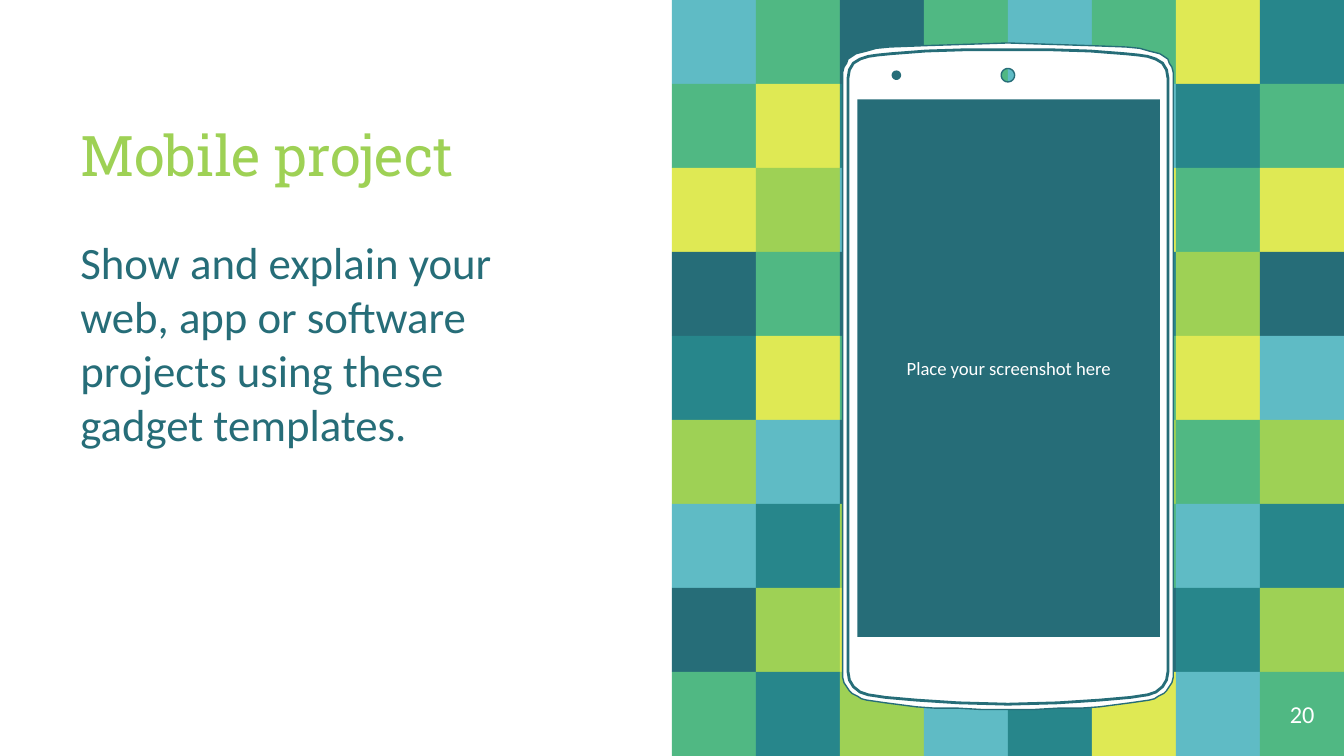
from math import cos, pi, sin

from pptx import Presentation
from pptx.dml.color import RGBColor
from pptx.enum.shapes import MSO_SHAPE
from pptx.enum.text import MSO_ANCHOR, PP_ALIGN
from pptx.util import Inches, Pt

RECTANGLE = MSO_SHAPE.RECTANGLE
TOP, MIDDLE, BOTTOM = MSO_ANCHOR.TOP, MSO_ANCHOR.MIDDLE, MSO_ANCHOR.BOTTOM
LEFT, CENTER = PP_ALIGN.LEFT, PP_ALIGN.CENTER

WHITE = RGBColor(0xFF, 0xFF, 0xFF)
LIME = RGBColor(0x9E, 0xD1, 0x55)
DARK = RGBColor(0x26, 0x6D, 0x78)
YELLOW = RGBColor(0xDF, 0xE9, 0x54)
GREEN = RGBColor(0x50, 0xB8, 0x83)
TEAL = RGBColor(0x27, 0x86, 0x8B)
BLUE = RGBColor(0x5F, 0xBB, 0xC5)

TITLE = "Mobile project"
BODY = "Show and explain your web, app or software projects using these gadget templates."
SCREEN_TEXT = "Place your screenshot here"
PAGE_NUMBER = "20"

TILE_COLORS = {"L": LIME, "D": DARK, "Y": YELLOW, "G": GREEN, "T": TEAL, "B": BLUE}
TILE_ROWS = [
    "BGDGBGYT",
    "GYTDYBTG",
    "YLB  YGY",
    "DGD  TLD",
    "TYG  GYB",
    "LBD  LGL",
    "BTL  GBT",
    "DLYDGDTL",
    "GTLBTYBG",
]
SLIDE_WIDTH = 10
TILES_LEFT = SLIDE_WIDTH / 2
TILE_SIZE = TILES_LEFT / len(TILE_ROWS[0])
SLIDE_HEIGHT = TILE_SIZE * len(TILE_ROWS)

PHONE_CENTER = 7.5
CASE_LEFT_HALF = [
    (7.5, 0.32), (7.2, 0.33), (6.89, 0.34), (6.62, 0.35), (6.52, 0.36),
    (6.45, 0.38), (6.41, 0.39), (6.37, 0.4), (6.34, 0.42), (6.31, 0.44),
    (6.3, 0.47), (6.28, 0.5), (6.27, 0.54), (6.27, 0.58),
    (6.27, 5), (6.27, 5.04), (6.28, 5.08), (6.3, 5.11), (6.32, 5.14),
    (6.34, 5.16), (6.38, 5.18), (6.41, 5.2), (6.45, 5.21), (6.59, 5.23),
    (6.82, 5.26), (6.96, 5.27), (7.13, 5.27), (7.31, 5.28), (7.5, 5.28),
]
RIM_LEFT_HALF = [
    (7.5, 0.37), (7.2, 0.37), (6.89, 0.38), (6.63, 0.4), (6.53, 0.41),
    (6.46, 0.42), (6.4, 0.44), (6.35, 0.47), (6.32, 0.52), (6.31, 0.58),
    (6.31, 5), (6.32, 5.06), (6.35, 5.11), (6.4, 5.15), (6.46, 5.17),
    (6.59, 5.19), (6.82, 5.21), (7.13, 5.23), (7.5, 5.24),
]
CAMERA = (7.5, 0.56, 0.05)
SENSOR = (6.67, 0.56, 0.03)


def mirrored(left_half):
    right_half = [(2 * PHONE_CENTER - x, y) for x, y in reversed(left_half[1:-1])]
    return left_half + right_half


def circle(center_x, center_y, radius, steps=24):
    angles = [2 * pi * step / steps for step in range(steps)]
    return [(center_x + radius * cos(a), center_y + radius * sin(a)) for a in angles]


def style_shape(shape, fill=None, line=None, width=0.75):
    shape.shadow.inherit = False
    if fill is None:
        shape.fill.background()
    else:
        shape.fill.solid()
        shape.fill.fore_color.rgb = fill
    if line is None:
        shape.line.fill.background()
    else:
        shape.line.color.rgb = line
        shape.line.width = Pt(width)


def add_rectangle(slide, box, fill):
    shape = slide.shapes.add_shape(RECTANGLE, *map(Inches, box))
    style_shape(shape, fill)
    return shape


def add_outline(slide, contours, **style):
    contours = [[(Inches(x), Inches(y)) for x, y in contour] for contour in contours]
    builder = slide.shapes.build_freeform(*contours[0][0])
    for index, contour in enumerate(contours):
        if index:
            builder.move_to(*contour[0])
        builder.add_line_segments(contour[1:], close=True)
    style_shape(builder.convert_to_shape(), **style)


def write_text(shape, text, size, color, font="Calibri", align=LEFT, anchor=TOP, before=0):
    frame = shape.text_frame
    frame.word_wrap = True
    frame.vertical_anchor = anchor
    frame.margin_left = frame.margin_right = Inches(0.1)
    frame.margin_top = frame.margin_bottom = Inches(0.1)
    paragraph = frame.paragraphs[0]
    paragraph.alignment = align
    paragraph.space_before = Pt(before)
    run = paragraph.add_run()
    run.text = text
    run.font.size = Pt(size)
    run.font.name = font
    run.font.color.rgb = color


def add_text(slide, box, text, **style):
    write_text(slide.shapes.add_textbox(*map(Inches, box)), text, **style)


def main():
    presentation = Presentation()
    presentation.slide_width = Inches(SLIDE_WIDTH)
    presentation.slide_height = Inches(SLIDE_HEIGHT)
    slide = presentation.slides.add_slide(presentation.slide_layouts[6])

    for row, codes in enumerate(TILE_ROWS):
        for column, code in enumerate(codes):
            if code in TILE_COLORS:
                left = TILES_LEFT + column * TILE_SIZE
                box = (left, row * TILE_SIZE, TILE_SIZE, TILE_SIZE)
                add_rectangle(slide, box, TILE_COLORS[code])

    case = [mirrored(CASE_LEFT_HALF), circle(*CAMERA), circle(*SENSOR)]
    add_outline(slide, case, fill=WHITE, line=DARK)
    add_outline(slide, [mirrored(RIM_LEFT_HALF)], line=DARK, width=1.5)

    add_text(slide, (0.5, 1.65, 3.87, 3.57), BODY, size=24, color=DARK, before=6)
    screen = add_rectangle(slide, (6.38, 0.74, 2.25, 4), DARK)
    write_text(screen, SCREEN_TEXT, size=10, color=WHITE, align=CENTER, anchor=MIDDLE)
    page_box = (SLIDE_WIDTH - TILE_SIZE, SLIDE_HEIGHT - TILE_SIZE, TILE_SIZE, TILE_SIZE)
    add_text(slide, page_box, PAGE_NUMBER, size=13, color=WHITE,
             align=CENTER, anchor=MIDDLE)
    add_text(slide, (0.5, 0.56, 3.87, 0.94), TITLE, size=30, color=LIME,
             font="Roboto Slab", anchor=BOTTOM)

    presentation.save("out.pptx")


if __name__ == "__main__":
    main()
